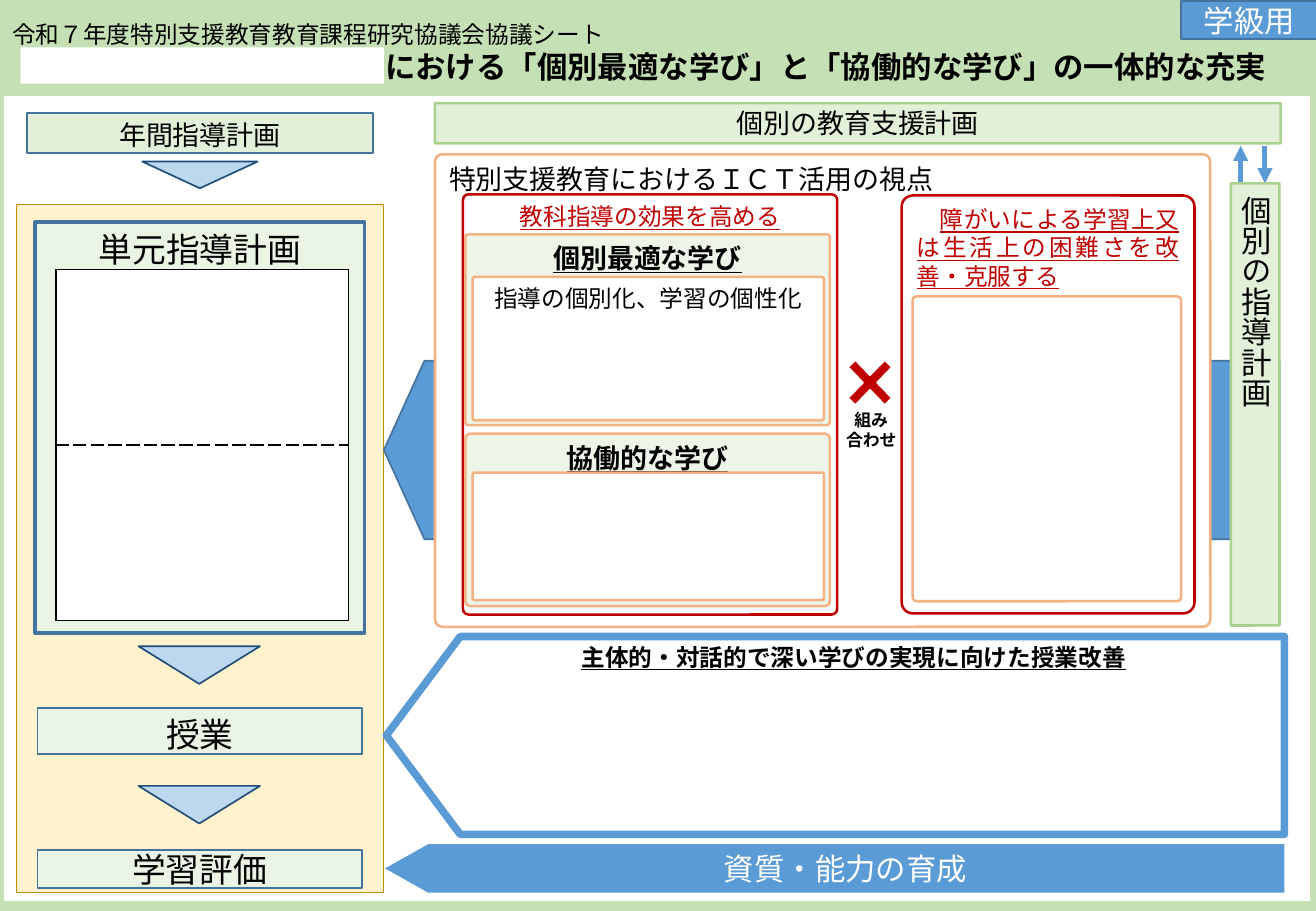
"""Build the class worksheet slide on integrating individual and collaborative learning."""
from lxml import etree
from pptx import Presentation
from pptx.dml.color import RGBColor
from pptx.enum import lang, shapes, text as t
from pptx.oxml import ns
from pptx.util import Inches, Pt

FONT = "Noto Sans CJK JP"
C = {"black": "000000", "white": "FFFFFF", "red": "C00000", "blue": "5B9BD5", "navy": "43739E",
     "band": "C5E0B4", "leaf": "E2F0D9", "mint": "EAF4E4", "pale": "ECF5E7", "green": "A9D18E",
     "orange": "F4B183", "cream": "FFF2CC", "gold": "BF9000", "sky": "BDD7EE", "deep": "1F4E79"}
G = shapes.MSO_SHAPE
LEFT, CENTER, JUSTIFY = t.PP_ALIGN.LEFT, t.PP_ALIGN.CENTER, t.PP_ALIGN.JUSTIFY
MIDDLE, TOP = t.MSO_ANCHOR.MIDDLE, t.MSO_ANCHOR.TOP


def write(p, words, size=16, color="black", bold=False, underline=False,
          align=CENTER, margin=0, indent=0):
    """Fill a paragraph with one formatted run."""
    pPr = p._p.get_or_add_pPr()
    pPr.set("marL", str(Inches(margin)))
    pPr.set("indent", str(Inches(indent)))
    p.alignment = align
    r = p.add_run()
    r.text = words
    f = r.font
    f.name, f.size, f.bold, f.underline = FONT, Pt(size), bold, underline
    f.language_id = lang.MSO_LANGUAGE_ID.JAPANESE
    f.color.rgb = RGBColor.from_string(C[color])
    etree.SubElement(f._element, ns.qn("a:ea"), typeface=FONT)


def box(x, y, w, h, fill=None, line=None, width=1.5, kind=G.RECTANGLE, adj=(),
        flip=False, words="", anchor=TOP, **fmt):
    """Add a preset shape with optional text."""
    s = prs.slides[0].shapes.add_shape(kind, Inches(x), Inches(y), Inches(w), Inches(h))
    s.shadow.inherit = False
    for i, a in enumerate(adj):
        s.adjustments[i] = a
    if fill:
        s.fill.solid()
        s.fill.fore_color.rgb = RGBColor.from_string(C[fill])
    else:
        s.fill.background()
    if line:
        s.line.color.rgb = RGBColor.from_string(C[line])
        s.line.width = Pt(width)
    else:
        s.line.fill.background()
    if flip:
        s._element.spPr.xfrm.set("flipH", "1")
    if words:
        s.text_frame.vertical_anchor = anchor
        write(s.text_frame.paragraphs[0], words, **fmt)
    return s


prs = Presentation()
prs.slide_width, prs.slide_height = Inches(10.83), Inches(7.5)
slide = prs.slides.add_slide(prs.slide_layouts[5])

title = slide.shapes.title
title.left, title.top, title.width, title.height = Inches(0), Inches(0.02), Inches(10.83), Inches(0.77)
title.fill.solid()
title.fill.fore_color.rgb = RGBColor.from_string(C["band"])
tf = title.text_frame
tf.auto_size = t.MSO_AUTO_SIZE.NONE
tf.vertical_anchor = MIDDLE
tf.margin_bottom = 0
write(tf.paragraphs[0], "令和７年度特別支援教育教育課程研究協議会協議シート", size=14, align=JUSTIFY)
write(tf.add_paragraph(), "における「個別最適な学び」と「協働的な学び」の一体的な充実",
      size=18, bold=True, align=LEFT, margin=3.07)

for x, y1, y2 in [(10.41, 1.2, 1.51), (10.21, 1.51, 1.2)]:
    link = slide.shapes.add_connector(shapes.MSO_CONNECTOR.STRAIGHT,
                                      Inches(x), Inches(y1), Inches(x), Inches(y2))
    link.line.color.rgb = RGBColor.from_string(C["blue"])
    link.line.width = Pt(3)
    etree.SubElement(link.line._get_or_add_ln(), ns.qn("a:tailEnd"), type="triangle")
    etree.SubElement(link._element.spPr, ns.qn("a:effectLst"))

box(0.13, 1.68, 3.02, 5.67, "cream", "gold", 0.25)
box(0.22, 0.93, 2.85, 0.33, "leaf", "navy", 1, words="年間指導計画")
box(0.29, 1.83, 2.71, 3.38, "mint", "navy", 2.25, words="単元指導計画", size=20)
box(0.31, 5.83, 2.67, 0.38, "mint", "navy", 1, words="授業", size=20)
box(0.31, 7, 2.67, 0.31, "mint", "navy", 1, words="学習評価", size=20, anchor=MIDDLE)
for x, y, w, h in [(1.17, 1.33, 0.95, 0.22), (1.14, 5.32, 1, 0.31), (1.14, 6.47, 1, 0.31)]:
    box(x, y, w, h, "sky", "deep", 1, G.DOWN_ARROW, (0.5, 1))

box(3.18, 5.24, 7.39, 1.63, "white", "blue", 4.5, G.PENTAGON, (0.373,), True,
    "主体的・対話的で深い学びの実現に向けた授業改善", size=14, bold=True, underline=True)
box(3.17, 6.95, 7.4, 0.4, "blue", kind=G.PENTAGON, adj=(0.887,), flip=True,
    words="資質・能力の育成", anchor=MIDDLE, size=18, color="white")
box(3.16, 2.97, 7.37, 1.47, "blue", "navy", 1, G.RIGHT_ARROW, (1, 0.227), True)

panel = dict(kind=G.ROUNDED_RECTANGLE, adj=(0.015,))
box(3.58, 1.27, 6.38, 3.89, "white", "orange", **panel,
    words="特別支援教育におけるＩＣＴ活用の視点", align=JUSTIFY)
box(3.81, 1.6, 3.08, 3.46, "white", "red", **panel,
    words="教科指導の効果を高める", size=14, color="red", underline=True)
box(7.42, 1.61, 2.41, 3.44, "white", "red", kind=G.ROUNDED_RECTANGLE, adj=(0.038,),
    words="障がいによる学習上又は生活上の困難さを改善・克服する",
    size=14, color="red", underline=True, align=JUSTIFY, indent=0.19)
box(7.51, 2.44, 2.21, 2.51, "white", "orange", **panel)
for y, h, adj, words in [(1.93, 1.57, 0.015, "個別最適な学び"), (3.57, 1.42, 0.03, "協働的な学び")]:
    box(3.83, y, 3, h, "pale", "orange", kind=G.ROUNDED_RECTANGLE, adj=(adj,),
        words=words, bold=True, underline=True)
for y, h, words in [(2.28, 1.18, "指導の個別化、学習の個性化"), (3.89, 1.05, "")]:
    box(3.89, y, 2.89, h, "white", "orange", **panel, words=words, size=14)

box(6.87, 2.85, 0.58, 0.6, "red", "white", 1, G.MATH_MULTIPLY, (0.144,))
tf = slide.shapes.add_textbox(Inches(6.83), Inches(3.32), Inches(0.68), Inches(0.44)).text_frame
tf.word_wrap = True
write(tf.paragraphs[0], "組み", size=10, bold=True)
write(tf.add_paragraph(), "合わせ", size=10, bold=True)

box(3.58, 0.85, 6.96, 0.33, "leaf", "green", **panel, words="個別の教育支援計画", anchor=MIDDLE)
s = box(10.13, 1.51, 0.4, 3.64, "leaf", "green", **panel,
        words="個別の指導計画", anchor=MIDDLE, size=18, align=LEFT)
s.text_frame._txBody.bodyPr.set("vert", "eaVert")

box(-0.01, 0.02, 10.83, 7.44, line="band", width=6)
box(0.17, 0.39, 2.99, 0.3, "white")
box(9.72, 0.01, 1.12, 0.31, "blue", "navy", 1, words="学級用", anchor=MIDDLE, size=18, color="white")

table = slide.shapes.add_table(2, 1, Inches(0.46), Inches(2.22), Inches(2.41), Inches(2.89)).table
table.first_row = table.horz_banding = False
for row, dashed in enumerate(["lnB", "lnT"]):
    cell = table.cell(row, 0)
    tcPr = cell._tc.get_or_add_tcPr()
    for side in ["lnL", "lnR", "lnT", "lnB"]:
        ln = etree.SubElement(tcPr, ns.qn("a:" + side), w=str(Pt(1)))
        etree.SubElement(etree.SubElement(ln, ns.qn("a:solidFill")), ns.qn("a:srgbClr"), val=C["black"])
        etree.SubElement(ln, ns.qn("a:prstDash"), val="sysDash" if side == dashed else "solid")
    cell.fill.solid()
    cell.fill.fore_color.rgb = RGBColor.from_string(C["white"])

prs.save("out.pptx")
